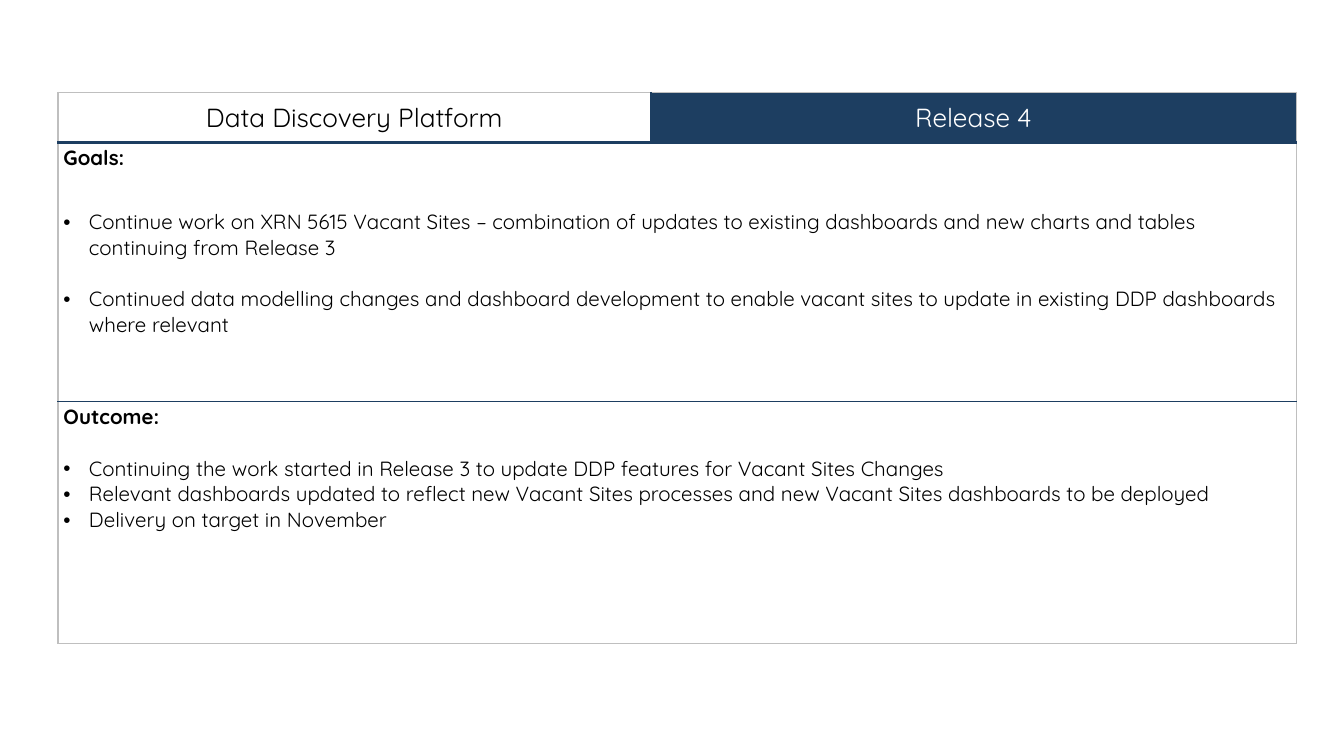
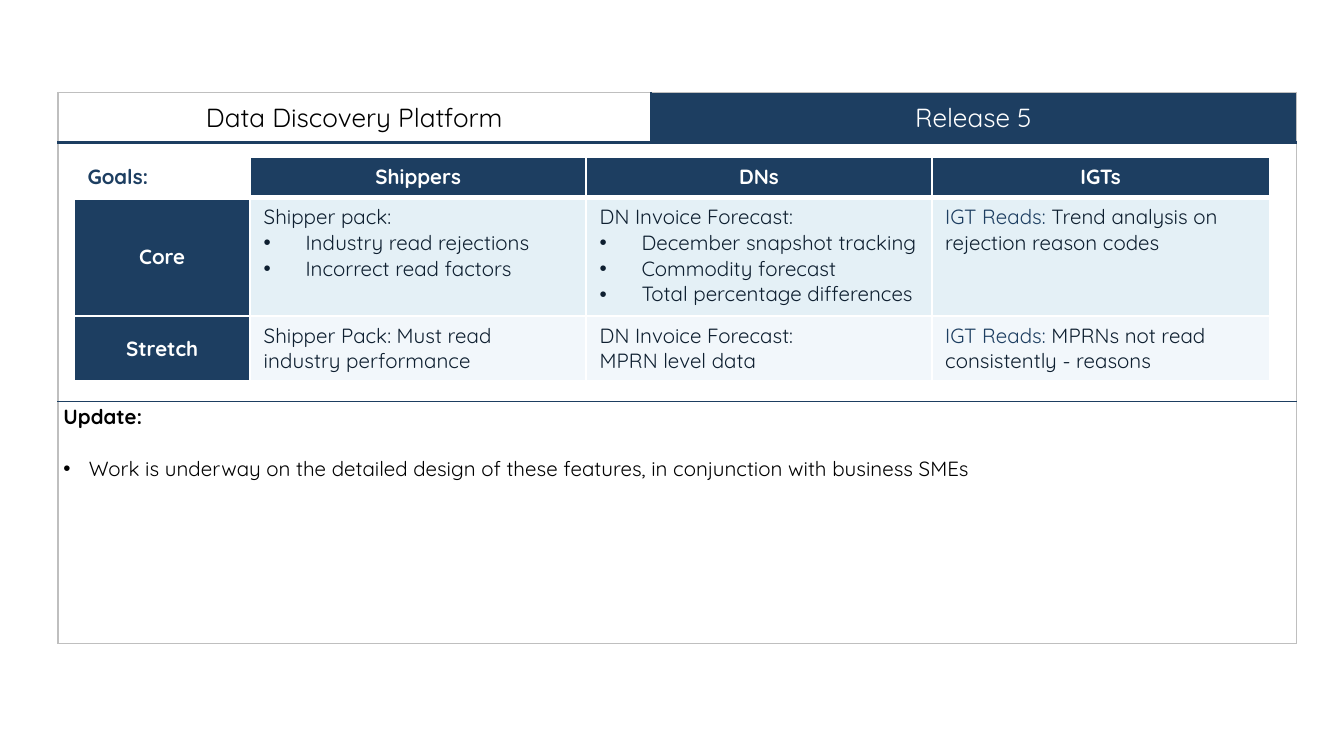
from lxml.etree import SubElement
from pptx import Presentation
from pptx.dml.color import RGBColor
from pptx.enum.text import MSO_ANCHOR as Anchor, PP_ALIGN as Align
from pptx.oxml.ns import qn
from pptx.util import Cm, Pt

FONT = "Quicksand"
NAVY = RGBColor(0x1D, 0x3E, 0x61)
INK = RGBColor(0x0E, 0x1F, 0x30)
BLACK = RGBColor(0, 0, 0)
WHITE = RGBColor(0xFF, 0xFF, 0xFF)
GREY = RGBColor(0xBF, 0xBF, 0xBF)
PALE = RGBColor(0xE4, 0xF0, 0xF6)
PALER = RGBColor(0xF2, 0xF7, 0xFB)

# Frame shared by both slides, in cm
FRAME_LEFT, FRAME_TOP = 1.1, 1.75
FRAME_COLUMNS = (11.2, 12.2)
FRAME_ROWS = (0.94, 4.9, 4.57)
LINE_GAP = 13.75  # one empty line of body text, in points

# Goals grid: offset within the goals row, in cm
GRID_OFFSET = (0.3, 0.28)
GRID_COLUMNS = (3.33, 6.35, 6.53, 6.38)
GRID_ROWS = (0.76, 2.24, 1.2)


def add_text(frame, text, size=11, color=BLACK, bold=False, align=Align.LEFT,
             indent=0, before=0, lead="", lead_color=NAVY):
    """Append a paragraph; indent (cm) makes it a bullet, lead is a coloured opening."""
    para = frame.add_paragraph() if frame.text else frame.paragraphs[0]
    if indent:
        props = para._p.get_or_add_pPr()
        props.set("marL", str(Cm(indent)))
        props.set("indent", str(-Cm(indent)))
        SubElement(props, qn("a:buFont")).set("typeface", "Arial")
        SubElement(props, qn("a:buChar")).set("char", "•")
    para.alignment = align
    if before:
        para.space_before = Pt(before)
    for words, tint in ((lead, lead_color), (text, color)):
        if words:
            run = para.add_run()
            run.text = words
            run.font.name = FONT
            run.font.size = Pt(size)
            run.font.bold = bold
            run.font.color.rgb = tint


def style_cell(cell, borders, fill=None, anchor=Anchor.TOP, margins=None):
    """Borders map a side (L, R, T, B) to its colour and width in points."""
    props = cell._tc.get_or_add_tcPr()
    for side in "LRTB":
        color, width = borders[side]
        line = SubElement(props, qn(f"a:ln{side}"), w=str(Pt(width)))
        paint = SubElement(line, qn("a:solidFill"))
        SubElement(paint, qn("a:srgbClr"), val=str(color))
    if fill is None:
        cell.fill.background()
    else:
        cell.fill.solid()
        cell.fill.fore_color.rgb = fill
    cell.vertical_anchor = anchor
    if margins:
        cell.margin_left = cell.margin_right = Cm(margins[0])
        cell.margin_top = cell.margin_bottom = Cm(margins[1])


def add_grid(slide, left, top, columns, rows):
    table = slide.shapes.add_table(
        len(rows), len(columns), Cm(left), Cm(top),
        Cm(sum(columns)), Cm(sum(rows))).table
    table.first_row = table.horz_banding = False
    for column, width in zip(table.columns, columns):
        column.width = Cm(width)
    for row, height in zip(table.rows, rows):
        row.height = Cm(height)
    return table


def add_release_frame(slide, release, left, top):
    """Draw the titled frame and return its goals and result cells."""
    table = add_grid(slide, left, top, FRAME_COLUMNS, FRAME_ROWS)
    edge, header_rule, divider = (GREY, 1), (NAVY, 1.5), (NAVY, 0.75)
    rules = (edge, header_rule, divider, edge)
    for r in range(3):
        for c in range(2):
            middle = (NAVY, 1) if r == 0 else edge
            borders = {"L": middle if c else edge, "R": edge if c else middle,
                       "T": rules[r], "B": rules[r + 1]}
            style_cell(table.cell(r, c), borders,
                       fill=NAVY if (r, c) == (0, 1) else None,
                       anchor=Anchor.TOP if r else Anchor.MIDDLE,
                       margins=(0.1, 0.05))
    headings = (("Data Discovery Platform", BLACK), (release, WHITE))
    for c, (heading, color) in enumerate(headings):
        add_text(table.cell(0, c).text_frame, heading, size=14, color=color,
                 align=Align.CENTER)
    for r in (1, 2):
        table.cell(r, 0).merge(table.cell(r, 1))
    return table.cell(1, 0), table.cell(2, 0)


def fill_section(cell, heading, bullets, first_gap=LINE_GAP, gap=0,
                 align=Align.JUSTIFY):
    add_text(cell.text_frame, heading, bold=True)
    for i, bullet in enumerate(bullets):
        add_text(cell.text_frame, bullet, indent=0.48, align=align,
                 before=gap if i else first_gap)


def add_goals_grid(slide, left, top):
    table = add_grid(slide, left, top, GRID_COLUMNS, GRID_ROWS)
    headings = ("Goals:", "Shippers", "DNs", "IGTs")
    # Each goal: opening, text, bullets
    goals = (
        ("Core", PALE, (
            ("", ["Shipper pack:"],
             ["Industry read rejections", "Incorrect read factors"]),
            ("", ["DN Invoice Forecast:"],
             ["December snapshot tracking", "Commodity forecast",
              "Total percentage differences"]),
            ("IGT Reads: ", ["Trend analysis on rejection reason codes"], []))),
        ("Stretch", PALER, (
            ("", ["Shipper Pack: Must read industry performance"], []),
            ("", ["DN Invoice Forecast:", "MPRN level data"], []),
            ("IGT Reads: ", ["MPRNs not read consistently - reasons"], []))),
    )
    thin, thick = (WHITE, 1), (WHITE, 3)

    # Column headings
    for c, heading in enumerate(headings):
        cell = table.cell(0, c)
        style_cell(cell, {"L": thin, "R": thin, "T": thin, "B": thick},
                   fill=NAVY if c else None)
        add_text(cell.text_frame, heading, bold=True,
                 color=WHITE if c else NAVY,
                 align=Align.CENTER if c else Align.LEFT)

    # Goal rows
    for r, (level, tint, entries) in enumerate(goals, start=1):
        borders = {"L": thin, "R": thin, "T": thick if r == 1 else thin, "B": thin}
        level_cell = table.cell(r, 0)
        style_cell(level_cell, borders, fill=NAVY, anchor=Anchor.MIDDLE)
        add_text(level_cell.text_frame, level, bold=True, color=WHITE,
                 align=Align.CENTER)
        for c, (lead, lines, bullets) in enumerate(entries, start=1):
            cell = table.cell(r, c)
            style_cell(cell, borders, fill=tint)
            for line in lines:
                add_text(cell.text_frame, line, color=INK, lead=lead)
            for bullet in bullets:
                add_text(cell.text_frame, bullet, color=INK, indent=0.79)


def build_release_4(slide):
    goals, outcome = add_release_frame(slide, "Release 4", FRAME_LEFT, FRAME_TOP)
    fill_section(goals, "Goals:", (
        "Continue work on XRN 5615 Vacant Sites – combination of updates to existing "
        "dashboards and new charts and tables continuing from Release 3",
        "Continued data modelling changes and dashboard development to enable vacant "
        "sites to update in existing DDP dashboards where relevant",
    ), first_gap=1.5 * LINE_GAP, gap=LINE_GAP, align=Align.LEFT)
    fill_section(outcome, "Outcome:", (
        "Continuing the work started in Release 3 to update DDP features for Vacant "
        "Sites Changes",
        "Relevant dashboards updated to reflect new Vacant Sites processes and new "
        "Vacant Sites dashboards to be deployed",
        "Delivery on target in November",
    ))


def build_release_5(slide):
    _, update = add_release_frame(slide, "Release 5", FRAME_LEFT, FRAME_TOP)
    fill_section(update, "Update:", (
        "Work is underway on the detailed design of these features, in conjunction "
        "with business SMEs",
    ))
    add_goals_grid(slide, FRAME_LEFT + GRID_OFFSET[0],
                   FRAME_TOP + FRAME_ROWS[0] + GRID_OFFSET[1])


def main():
    deck = Presentation()
    deck.slide_width, deck.slide_height = Cm(25.4), Cm(14.29)
    blank = deck.slide_layouts[6]
    for build in (build_release_4, build_release_5):
        build(deck.slides.add_slide(blank))
    deck.save("out.pptx")


if __name__ == "__main__":
    main()
